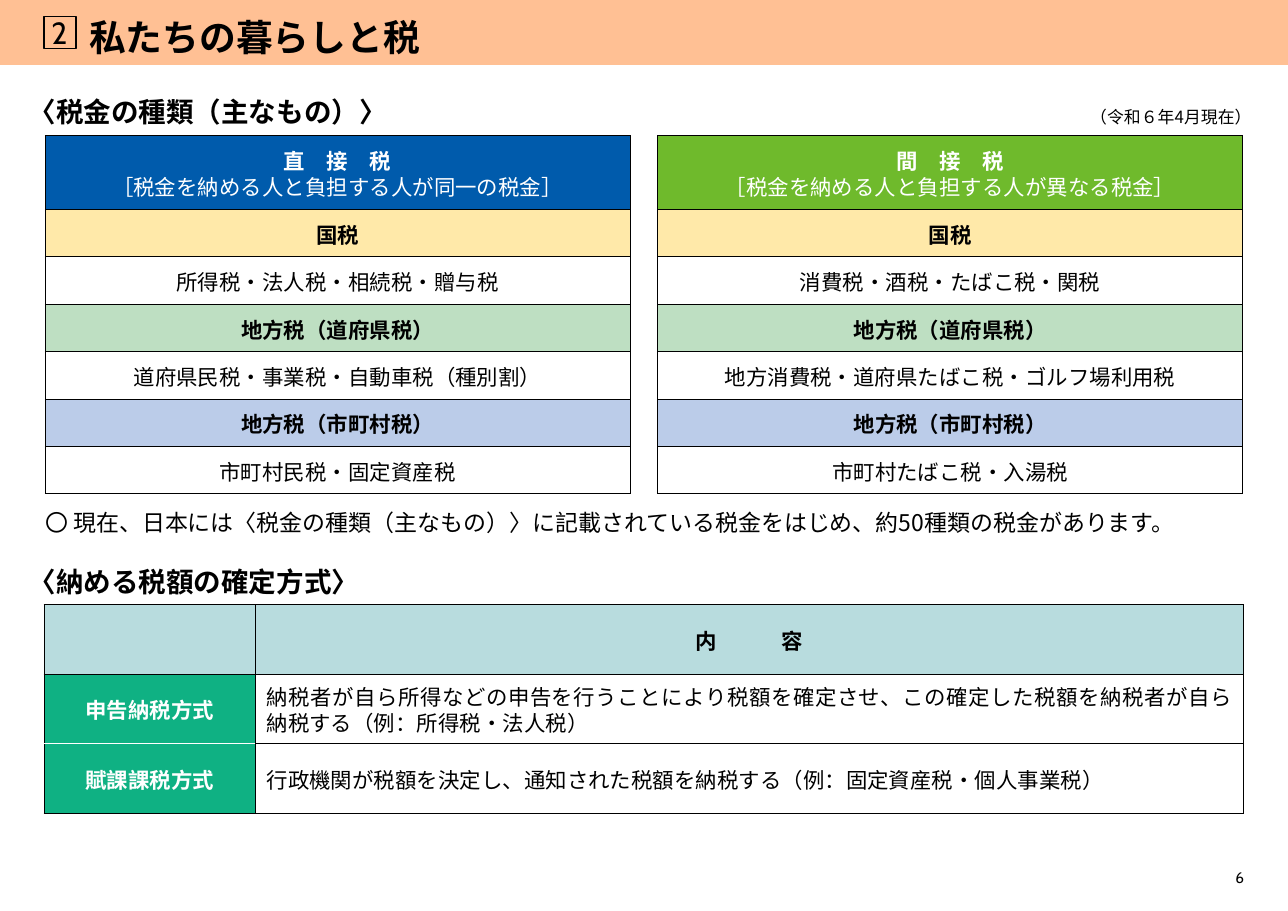
from dataclasses import dataclass

from lxml.etree import SubElement
from pptx import Presentation
from pptx.dml.color import RGBColor
from pptx.enum.shapes import MSO_SHAPE
from pptx.enum.text import MSO_ANCHOR, MSO_AUTO_SIZE, PP_ALIGN
from pptx.oxml.ns import qn
from pptx.util import Inches, Pt


@dataclass(frozen=True)
class Theme:
    latin: str = "Cabin"
    japanese: str = "Noto Sans CJK JP"
    black: str = "000000"
    white: str = "FFFFFF"
    banner: str = "FFC094"
    direct: str = "005BAC"
    indirect: str = "6FBA2C"
    national: str = "FFE9A9"
    prefecture: str = "BEDFC2"
    city: str = "BBCCE9"
    header: str = "B8DCDE"
    method: str = "0FB183"
    title: int = 24
    number: int = 20
    heading: int = 18
    body: int = 15
    cell: int = 14
    note: int = 11
    page: int = 10


def write(p, *spans, font, size, color, bold=False, align=PP_ALIGN.LEFT):
    """Fill a paragraph; a span is a text or a (text, letter spacing) pair."""
    p.alignment = align
    for span in spans:
        text, spacing = (span, 0) if isinstance(span, str) else span
        r = p.add_run()
        r.text = text
        r.font.name, r.font.size, r.font.bold = font, Pt(size), bold
        r.font.color.rgb = RGBColor.from_string(color)
        rPr = r.font._element
        SubElement(rPr, qn("a:ea")).set("typeface", font)
        if spacing:
            rPr.set("spc", str(round(spacing * 100)))


class TaxSlide:
    def __init__(self, prs, theme):
        self.theme = theme
        self.s = prs.slides.add_slide(prs.slide_layouts[5])

    def rect(self, x, y, w, h, fill=None, line=None):
        sp = self.s.shapes.add_shape(
            MSO_SHAPE.RECTANGLE, Inches(x), Inches(y), Inches(w), Inches(h))
        sp.shadow.inherit = False
        if fill:
            sp.fill.solid()
            sp.fill.fore_color.rgb = RGBColor.from_string(fill)
        else:
            sp.fill.background()
        if line:
            sp.line.color.rgb = RGBColor.from_string(line)
            sp.line.width = Pt(1)
        else:
            sp.line.fill.background()

    def frame(self, sp):
        tf = sp.text_frame
        tf.word_wrap = True
        tf.auto_size = MSO_AUTO_SIZE.NONE
        tf.vertical_anchor = MSO_ANCHOR.TOP
        tf.margin_left = tf.margin_right = tf.margin_top = tf.margin_bottom = 0
        return tf

    def title(self, text, x, y, w, h):
        sp = self.s.shapes.title
        sp.left, sp.top, sp.width, sp.height = map(Inches, (x, y, w, h))
        sp.element.getparent().append(sp.element)  # in front of the banner
        t = self.theme
        write(self.frame(sp).paragraphs[0], text, font=t.latin, size=t.title,
              color=t.black, bold=True)

    def text(self, x, y, w, h, *spans, **fmt):
        sp = self.s.shapes.add_textbox(Inches(x), Inches(y), Inches(w), Inches(h))
        fmt = {"font": self.theme.japanese, "color": self.theme.black} | fmt
        write(self.frame(sp).paragraphs[0], *spans, **fmt)

    def heading(self, y, *spans):
        self.text(0.26, y, 4.21, 0.3, *spans, size=self.theme.heading, bold=True)

    def table(self, x, y, cols, rows):
        shape = self.s.shapes.add_table(
            len(rows), len(cols), Inches(x), Inches(y),
            Inches(sum(cols)), Inches(sum(rows)))
        tb = shape.table
        tb.first_row = tb.horz_banding = False
        for col, w in zip(tb.columns, cols):
            col.width = Inches(w)
        for row, h in zip(tb.rows, rows):
            row.height = Inches(h)
        return tb

    def cell(self, tb, row, col, *paragraphs, fill, color=None, bold=(False,),
             align=PP_ALIGN.CENTER, top=0.05, white_edge=None):
        t, c = self.theme, tb.cell(row, col)
        c.vertical_anchor = MSO_ANCHOR.MIDDLE
        c.margin_left = c.margin_right = Inches(0.1)
        c.margin_top, c.margin_bottom = Inches(top), 0
        # Outer edges are heavier than inner ones
        outer = {"L": col == 0, "R": col == len(tb.columns) - 1,
                 "T": row == 0, "B": row == len(tb.rows) - 1}
        for side, heavy in outer.items():
            ln = SubElement(c._tc.get_or_add_tcPr(), qn(f"a:ln{side}"),
                            w=str(Pt(0.5 if heavy else 0.25)))
            paint = SubElement(ln, qn("a:solidFill"))
            SubElement(paint, qn("a:srgbClr"),
                       val=t.white if side == white_edge else t.black)
        c.fill.solid()
        c.fill.fore_color.rgb = RGBColor.from_string(fill)
        tf = c.text_frame
        for i, (spans, strong) in enumerate(zip(paragraphs, bold)):
            p = tf.add_paragraph() if i else tf.paragraphs[0]
            write(p, *spans, font=t.latin, size=t.cell, color=color or t.black,
                  bold=strong, align=align)

    def tax_table(self, x, name, meaning, fill, taxes):
        t = self.theme
        tb = self.table(x, 1.23, [5.31], [0.67] + [0.43] * 6)
        self.cell(tb, 0, 0, [name], [meaning], fill=fill, color=t.white,
                  bold=(True, False))
        levels = [("国税", t.national), ("地方税（道府県税）", t.prefecture),
                  ("地方税（市町村税）", t.city)]
        for i, ((level, tint), items) in enumerate(zip(levels, taxes)):
            self.cell(tb, 2 * i + 1, 0, [level], fill=tint, bold=(True,))
            self.cell(tb, 2 * i + 2, 0, [items], fill=t.white)

    def method_table(self, methods):
        t = self.theme
        tb = self.table(0.4, 5.49, [1.92, 8.97], [0.63] * 3)
        self.cell(tb, 0, 0, fill=t.header)
        self.cell(tb, 0, 1, ["内　　　容"], fill=t.header, bold=(True,), top=0.04)
        for row, (name, spans) in enumerate(methods, 1):
            self.cell(tb, row, 0, [name], fill=t.method, color=t.white,
                      bold=(True,), top=0.04, white_edge="B" if row == 1 else "T")
            self.cell(tb, row, 1, spans, fill=t.white, align=PP_ALIGN.LEFT, top=0.04)


def main():
    prs = Presentation()
    prs.slide_width, prs.slide_height = Inches(11.69), Inches(8.27)
    t = Theme()
    page = TaxSlide(prs, t)

    # Banner with section number
    page.rect(0, 0, 11.69, 0.59, fill=t.banner)
    page.rect(0.4, 0.15, 0.29, 0.29, line=t.black)
    page.title("私たちの暮らしと税", 0.81, 0.13, 10.63, 0.34)
    page.text(0.42, 0.13, 0.24, 0.34, "2", font=t.latin, size=t.number,
              align=PP_ALIGN.CENTER)

    # Kinds of tax
    page.heading(0.86, "〈税金の種", ("類", -3), "（主なもの", ("）", -6), "〉")
    page.text(9.67, 0.97, 1.69, 0.19, "（令和６年4月現在）", size=t.note,
              align=PP_ALIGN.RIGHT)
    page.tax_table(0.41, "直　接　税", "［税金を納める人と負担する人が同一の税金］", t.direct,
                   ["所得税・法人税・相続税・贈与税",
                    "道府県民税・事業税・自動車税（種別割）",
                    "市町村民税・固定資産税"])
    page.tax_table(5.97, "間　接　税", "［税金を納める人と負担する人が異なる税金］", t.indirect,
                   ["消費税・酒税・たばこ税・関税",
                    "地方消費税・道府県たばこ税・ゴルフ場利用税",
                    "市町村たばこ税・入湯税"])
    page.text(0.41, 4.62, 10.92, 0.25, "〇 現在、日本には〈税金の種類（主なもの", ("）", -3),
              "〉に記載されている税金をはじめ、約50種類の税金があります。", size=t.body)

    # How the amount is settled
    page.heading(5.13, "〈納める税額の確定方式〉")
    page.method_table([
        ("申告納税方式",
         [("納税者が自ら所得などの申告を行うことにより税額を確定させ、この確定した税額を納税者が自ら", 0.3),
          "納税する（例：所得税・法人税）"]),
        ("賦課課税方式",
         ["行政機関が税額を決定し、通知された税額を納税する（例：固定資産税・個人事業税）"]),
    ])

    # Page number
    page.text(11.14, 7.88, 0.15, 0.17, "6", font=t.latin, size=t.page,
              align=PP_ALIGN.RIGHT)
    prs.save("out.pptx")


if __name__ == "__main__":
    main()
